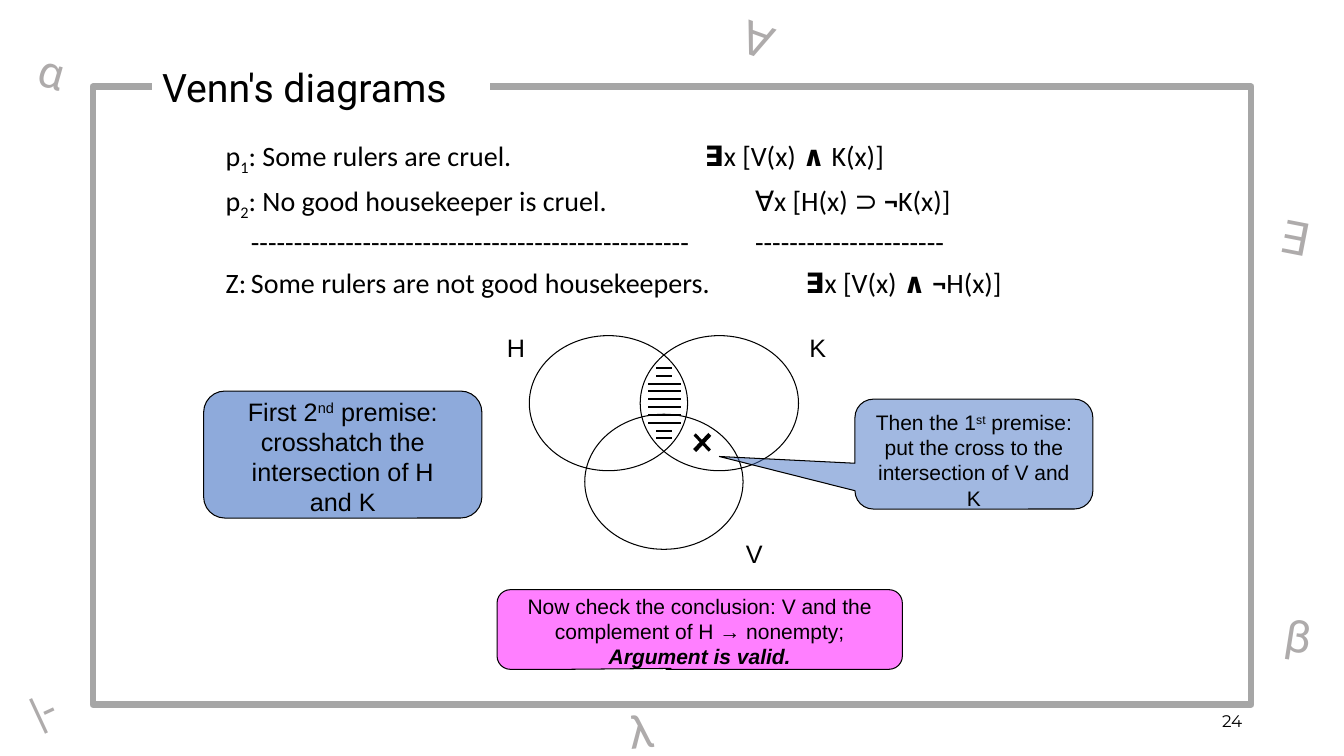
from lxml import etree
from pptx import Presentation
from pptx.dml.color import RGBColor
from pptx.enum.shapes import MSO_CONNECTOR, MSO_SHAPE
from pptx.enum.text import MSO_ANCHOR, PP_ALIGN
from pptx.oxml.ns import qn
from pptx.util import Inches, Pt

BLACK = RGBColor(0x00, 0x00, 0x00)
WHITE = RGBColor(0xFF, 0xFF, 0xFF)
BLUE = RGBColor(0x44, 0x72, 0xC4)
MAGENTA = RGBColor(0xFF, 0x00, 0xFF)
FRAME_GRAY = RGBColor(0xA6, 0xA6, 0xA6)
SYMBOL_GRAY = RGBColor(0xAE, 0xAB, 0xAB)
LEFT, CENTER, RIGHT = PP_ALIGN.LEFT, PP_ALIGN.CENTER, PP_ALIGN.RIGHT
TOP, MIDDLE = MSO_ANCHOR.TOP, MSO_ANCHOR.MIDDLE
OVAL, RECT = MSO_SHAPE.OVAL, MSO_SHAPE.RECTANGLE
ROUNDED = MSO_SHAPE.ROUNDED_RECTANGLE
CALLOUT = MSO_SHAPE.ROUNDED_RECTANGULAR_CALLOUT
STRAIGHT = MSO_CONNECTOR.STRAIGHT

BOLD = {"bold": True}
SUB = {"base": -25}
SUP = {"base": 30}

ARGUMENT = [
    ["p", ("1", SUB), ": Some rulers are cruel.\t\t\t\t", ("∃", BOLD),
     "x [V(x) ", ("∧ ", BOLD), "K(x)]"],
    ["p", ("2", SUB), ": No good housekeeper is cruel.\t\t\t∀x [H(x) ⊃ ",
     ("¬", BOLD), "K(x)]"],
    ["\t" + "-" * 51 + "\t\t" + "-" * 22],
    ["Z:\tSome rulers are not good housekeepers.\t\t", ("∃", BOLD),
     "x [V(x) ", ("∧ ¬", BOLD), "H(x)]"],
]
SETS = [
    ("H", (5.25, 3.33), (4.93, 3.25)),
    ("K", (6.35, 3.33), (7.93, 3.25)),
    ("V", (5.8, 4.11), (7.3, 5.29)),
]
SYMBOLS = [
    ("∀", 7.26, 0.09, 0.6, 20),
    ("∃", 12.6, 2.05, 0.63, 11),
    ("α", 0.29, 0.41, 0.63, 16),
    ("β", 12.65, 5.99, 0.58, 9),
    ("λ", 6.14, 6.92, 0.6, -6),
    ("|-", 0.2, 6.67, 0.68, -25),
]


def write(sp, paragraphs, size=18, font="Arial", color=BLACK, align=LEFT,
          anchor=TOP, top=0.05, before=0, spacing=1, hanging=0):
    tf = sp.text_frame
    tf.word_wrap = True
    tf.vertical_anchor = anchor
    tf.margin_top = Inches(top)
    for i, runs in enumerate(paragraphs):
        p = tf.add_paragraph() if i else tf.paragraphs[0]
        p.alignment = align
        p.space_before = Pt(before)
        p.line_spacing = spacing
        if hanging:
            pPr = p._p.get_or_add_pPr()
            pPr.set("marL", str(Inches(hanging)))
            pPr.set("indent", str(-Inches(hanging)))
        for run in runs:
            text, style = (run, {}) if isinstance(run, str) else run
            r = p.add_run()
            r.text = text
            r.font.size = Pt(size)
            r.font.name = font
            r.font.color.rgb = color
            r.font.bold = style.get("bold")
            r.font.italic = style.get("italic")
            if "base" in style:
                r.font._element.set("baseline", str(style["base"] * 1000))


def add_text(s, box, paragraphs, rotation=0, **style):
    sp = s.shapes.add_textbox(*map(Inches, box))
    sp.rotation = rotation
    write(sp, paragraphs, **style)


def add_shape(s, kind, box, fill=None, alpha=100, line=BLACK, width=0.75,
              adjustments=()):
    sp = s.shapes.add_shape(kind, *map(Inches, box))
    sp.shadow.inherit = False
    for i, value in enumerate(adjustments):
        sp.adjustments[i] = value
    if fill is None:
        sp.fill.background()
    else:
        sp.fill.solid()
        sp.fill.fore_color.rgb = fill
        if alpha < 100:
            clr = sp.fill._xPr.find(qn("a:solidFill"))[0]
            etree.SubElement(clr, qn("a:alpha")).set("val", str(alpha * 1000))
    if line is None:
        sp.line.fill.background()
    else:
        sp.line.color.rgb = line
        sp.line.width = Pt(width)
    return sp


def add_line(s, x1, y1, x2, y2, width):
    cxn = s.shapes.add_connector(STRAIGHT, *map(Inches, (x1, y1, x2, y2)))
    cxn.line.color.rgb = BLACK
    cxn.line.width = Pt(width)
    etree.SubElement(cxn._element.spPr, qn("a:effectLst"))


def add_venn(s):
    for name, circle, label in SETS:
        add_shape(s, OVAL, (*circle, 1.57, 1.34))
        add_text(s, (*label, 0.47, 0.4), [[name]])


def add_hatching(s, count=10, center=6.59, top=3.65, height=0.7):
    for i in range(count):
        half = 0.16 if 2 <= i < count - 2 else 0.08
        y = top + i * height / (count - 1)
        add_line(s, center - half, y, center + half, y, 1.5)


def add_cross(s):
    add_line(s, 6.89, 4.31, 7.04, 4.47, 2.25)
    add_line(s, 7.04, 4.31, 6.89, 4.47, 3)


def add_notes(s):
    sp = add_shape(s, CALLOUT, (4.93, 5.85, 4.02, 0.79), MAGENTA, 50,
                   adjustments=(-0.071, 0.489, 0.167))
    write(sp, [["Now check the conclusion: V and the complement of H → nonempty; ",
                ("Argument is valid.", {"bold": True, "italic": True})]],
          size=15, align=CENTER, top=0)
    sp = add_shape(s, CALLOUT, (8.48, 3.96, 2.36, 1.09), BLUE, 50,
                   adjustments=(-1.07, 0.022, 0.167))
    write(sp, [["Then the 1", ("st", SUP),
                " premise: put the cross to the intersection of V and K"]],
          size=15, align=CENTER)
    add_hatching(s)
    add_cross(s)
    add_shape(s, ROUNDED, (2.02, 3.88, 2.76, 1.26), BLUE, 60,
              adjustments=(0.167,))
    add_text(s, (2.18, 3.88, 2.44, 1.31),
             [["First 2", ("nd", SUP),
               " premise: crosshatch the intersection of H and K"]],
             align=CENTER)


def add_frame(s):
    add_shape(s, RECT, (0.92, 0.86, 11.49, 6.13), line=FRAME_GRAY, width=4.5)
    title = add_shape(s, RECT, (1.51, 0.56, 3.35, 0.61), WHITE, line=None)
    write(title, [["Venn's diagrams"]], size=28, font="Roboto", anchor=MIDDLE)
    for symbol, x, y, width, rotation in SYMBOLS:
        add_text(s, (x, y, width, 0.64), [[symbol]], rotation, size=32,
                 font="Roboto", color=SYMBOL_GRAY)


def main():
    prs = Presentation()
    prs.slide_width = Inches(13.33)
    prs.slide_height = Inches(7.5)
    s = prs.slides.add_slide(prs.slide_layouts[6])
    add_text(s, (2.14, 1.36, 8.91, 1.65), ARGUMENT, size=20, font="Calibri",
             before=10, spacing=0.8, hanging=0.25)
    add_text(s, (9.42, 6.95, 3, 0.4), [["24"]], size=12, font="Montserrat",
             align=RIGHT, anchor=MIDDLE)
    add_venn(s)
    add_notes(s)
    add_frame(s)
    prs.save("out.pptx")


if __name__ == "__main__":
    main()
